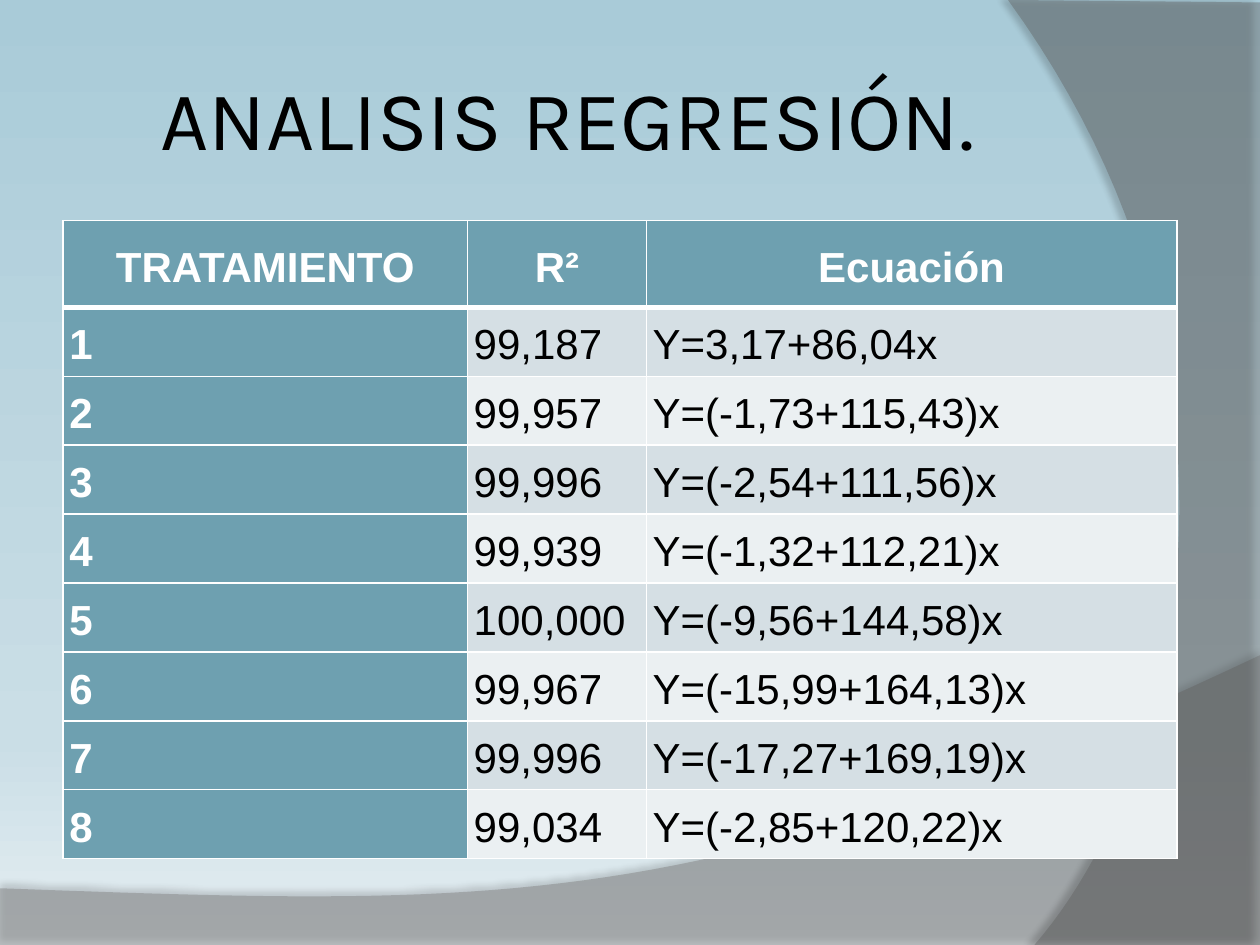
from copy import deepcopy
from lxml.etree import SubElement as Sub
from pptx import Presentation
from pptx.dml.color import RGBColor as RGB
from pptx.enum.text import MSO_ANCHOR as Anchor, PP_ALIGN as Align
from pptx.oxml.ns import qn
from pptx.util import Emu, Inches, Pt

HEX = {
    "ink": "000000", "white": "FFFFFF", "head": "6EA0B0",
    "odd": "D5DFE4", "even": "EBF0F2", "wave": "7F7F7F", "arc": "5E5E5E",
    "sky": "A9CBD8", "mist": "CADEE6", "pale": "E5EEF2",
}
ROWS = [
    ("TRATAMIENTO", "R²", "Ecuación"),
    ("1", "99,187", "Y=3,17+86,04x"),
    ("2", "99,957", "Y=(-1,73+115,43)x"),
    ("3", "99,996", "Y=(-2,54+111,56)x"),
    ("4", "99,939", "Y=(-1,32+112,21)x"),
    ("5", "100,000", "Y=(-9,56+144,58)x"),
    ("6", "99,967", "Y=(-15,99+164,13)x"),
    ("7", "99,996", "Y=(-17,27+169,19)x"),
    ("8", "99,034", "Y=(-2,85+120,22)x"),
]


def unit(n):
    """Grid of 100 columns by 75 rows, each a tenth of an inch."""
    return Inches(n / 10)


def curve(a, b, c, d, steps=48):
    """Points along a cubic curve from a to d."""
    for i in range(steps + 1):
        t = i / steps
        s = 1 - t
        yield tuple(s**3 * p + 3 * s * s * t * q + 3 * s * t * t * r + t**3 * e
                    for p, q, r, e in zip(a, b, c, d))


class Deck:
    def __init__(self):
        self.prs = Presentation()
        self.prs.slide_width, self.prs.slide_height = unit(100), unit(75)
        self.slide = self.prs.slides.add_slide(self.prs.slide_layouts[5])

    def color(self, name):
        return RGB.from_string(HEX[name])

    def font(self, para, face, size, name, bold=False):
        for run in para.runs:
            font = run.font
            font.name, font.size, font.bold = face, Pt(size), bold
            font.color.rgb = self.color(name)

    def back(self, stops):
        fill = self.slide.background.fill
        fill.gradient()
        fill.gradient_angle = 270
        group = next(self.slide.element.iter(qn("a:gsLst")))
        while len(group) < len(stops):
            group.append(deepcopy(group[0]))
        for stop, (pos, name) in zip(fill.gradient_stops, stops):
            stop.position, stop.color.rgb = pos, self.color(name)

    def band(self, points, name, alpha, shade, dist, angle):
        spots = [(unit(x), unit(y)) for x, y in points]
        path = self.slide.shapes.build_freeform(*spots[0])
        path.add_line_segments(spots[1:], close=True)
        shape = path.convert_to_shape()
        shape.shadow.inherit = False
        shape.line.fill.background()
        shape.fill.solid()
        shape.fill.fore_color.rgb = self.color(name)
        props = shape.element.spPr
        tint = next(props.iter(qn("a:srgbClr")))
        Sub(tint, qn("a:alpha"), val=str(alpha * 1000))
        # Soft shadow along the curved edge
        cast = Sub(props.find(qn("a:effectLst")), qn("a:outerShdw"),
                   blurRad=str(Pt(4)), dist=str(Pt(dist)),
                   dir=str(angle * 60000), algn="ctr", rotWithShape="0")
        ink = Sub(cast, qn("a:srgbClr"), val=HEX["ink"])
        Sub(ink, qn("a:alpha"), val=str(shade * 1000))

    def title(self, text, x, y, w, h):
        shape = self.slide.shapes.title
        shape.left, shape.top, shape.width, shape.height = map(unit, (x, y, w, h))
        self.slide.shapes.element.append(shape.element)
        frame = shape.text_frame
        frame.text = text
        frame.word_wrap = True
        frame.vertical_anchor = Anchor.MIDDLE
        frame.margin_left = frame.margin_right = unit(0.5)
        frame.margin_top = frame.margin_bottom = unit(0.5)
        para = frame.paragraphs[0]
        para.alignment = Align.CENTER
        self.font(para, "Karla", 48, "ink")

    def edge(self, cell, side, width):
        line = Sub(cell._tc.get_or_add_tcPr(), qn("a:ln" + side), w=str(Pt(width)))
        Sub(Sub(line, qn("a:solidFill")), qn("a:srgbClr"), val=HEX["white"])

    def cell(self, cell, text, row, col):
        top, key = row == 0, row == 0 or col == 0
        # Thick rule between the header and the body
        heavy = {"T": row == 1, "B": top}
        for side in "LRTB":
            self.edge(cell, side, 3 if heavy.get(side) else 1)
        cell.fill.solid()
        cell.fill.fore_color.rgb = self.color(
            "head" if key else "odd" if row % 2 else "even")
        cell.vertical_anchor = Anchor.MIDDLE
        cell.margin_left = cell.margin_right = unit(0.5)
        cell.margin_top = cell.margin_bottom = Emu(0)
        para = cell.text_frame.paragraphs[0]
        para.text = text
        para.alignment = Align.CENTER if top else Align.JUSTIFY
        para.line_spacing = 1.15
        self.font(para, "Arial", 24, "white" if key else "ink", key)

    def table(self, rows, x, y, cols, highs):
        grid = self.slide.shapes.add_table(
            len(rows), len(cols), unit(x), unit(y),
            unit(sum(cols)), unit(sum(highs))).table
        for col, wide in zip(grid.columns, cols):
            col.width = unit(wide)
        for row, high in zip(grid.rows, highs):
            row.height = unit(high)
        for i, row in enumerate(rows):
            for j, text in enumerate(row):
                self.cell(grid.cell(i, j), text, i, j)


def main():
    deck = Deck()

    # Backdrop: sky gradient, lower wave and right arc
    deck.back([(0, "sky"), (0.78, "mist"), (1, "pale")])
    wave = curve((100, 52), (55.9, 72.9), (39.1, 71.9), (0, 70.5))
    deck.band([(0, 75.1), (100, 75.1), *wave], "wave", 45, 35, 3.5, 270)
    arc = curve((82.1, 75), (93.5, 61.9), (101.8, 30), (80, 0))
    deck.band([(100, 0.2), (100, 75), *arc], "arc", 40, 45, 4, 180)

    # Title and regression table
    deck.title("ANALISIS REGRESIÓN. ", 5, 3, 81.7, 12.5)
    deck.table(ROWS, 5, 17.5, [32.1, 14.2, 42.1],
               [6.9] + [5.47] * (len(ROWS) - 1))
    deck.prs.save("out.pptx")


if __name__ == "__main__":
    main()
